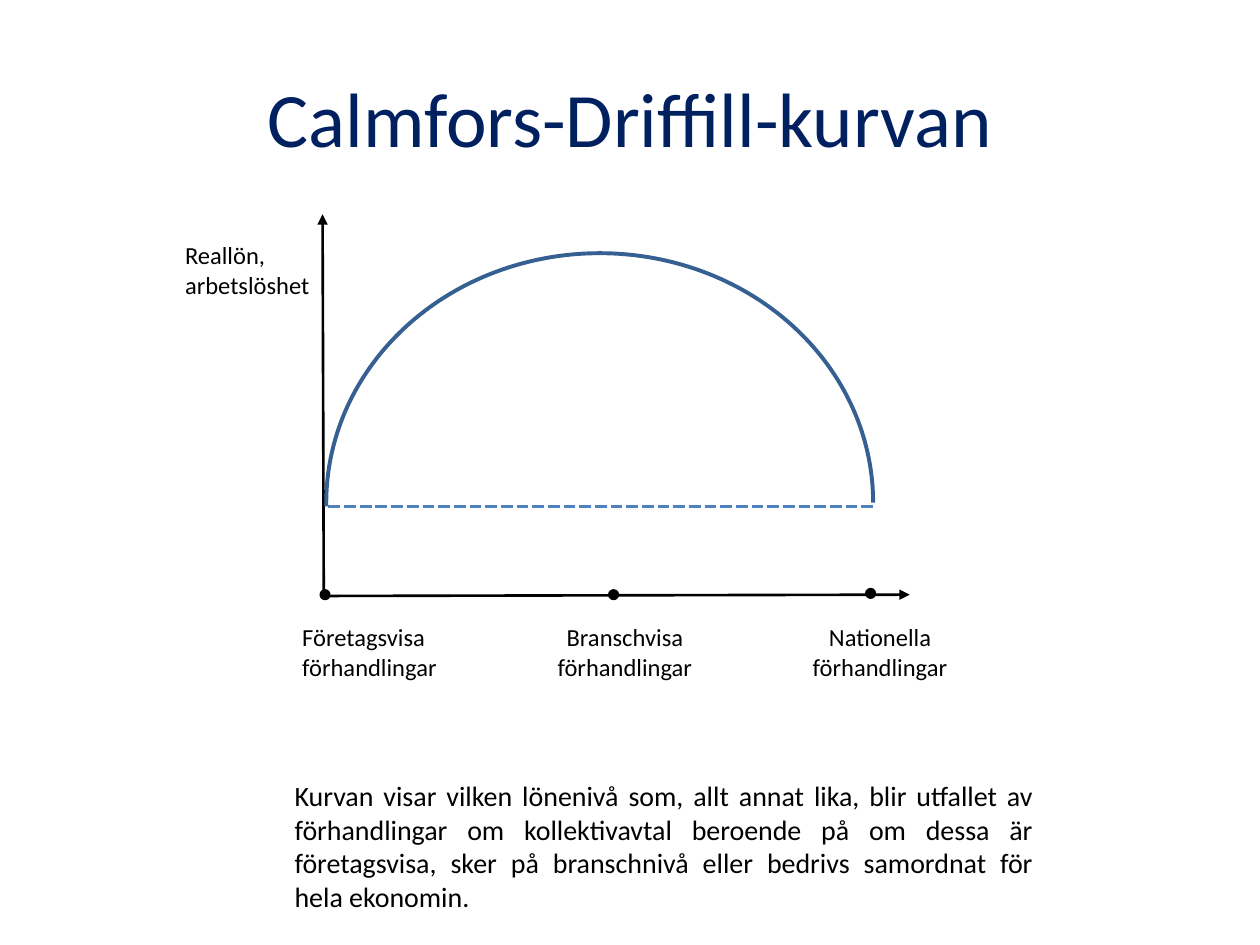
from lxml import etree
from pptx import Presentation
from pptx import util as u
from pptx.dml.color import RGBColor
from pptx.enum import dml, shapes, text
from pptx.oxml.ns import qn

BLACK, NAVY, BLUE, DARK_BLUE = "000000", "002060", "4F81BD", "376092"
LEFT, CENTER, JUSTIFY = text.PP_ALIGN.LEFT, text.PP_ALIGN.CENTER, text.PP_ALIGN.JUSTIFY


def rgb(value):
    """Return the colour of a hex string."""
    return RGBColor.from_string(value)


def inches(*values):
    """Return the values as lengths in inches."""
    return [u.Inches(v) for v in values]


def write(tf, content, size, color=BLACK, align=LEFT):
    """Put text in a frame, one paragraph a line, and format it."""
    tf.text = content
    for p in tf.paragraphs:
        p.alignment = align
        for r in p.runs:
            r.font.name = "Calibri"
            r.font.size = u.Pt(size)
            r.font.color.rgb = rgb(color)


def add_text(s, box, content, size=14, align=LEFT, wrap=True):
    """Add a text box that grows with its text."""
    tf = s.shapes.add_textbox(*inches(*box)).text_frame
    tf.word_wrap = wrap
    tf.auto_size = text.MSO_AUTO_SIZE.SHAPE_TO_FIT_TEXT
    write(tf, content, size, align=align)


def add_line(s, start, end, color=BLACK, width=1.5, arrow=False, dash=None):
    """Add a straight line, with an arrowhead or dashes if asked for."""
    sp = s.shapes.add_connector(shapes.MSO_CONNECTOR.STRAIGHT, *inches(*start, *end))
    sp.line.color.rgb = rgb(color)
    sp.line.width = u.Pt(width)
    if dash:
        sp.line.dash_style = dash
    if arrow:
        etree.SubElement(sp.line._get_or_add_ln(), qn("a:tailEnd"), type="triangle")
    etree.SubElement(sp._element.spPr, qn("a:effectLst"))


def add_outline(s, kind, box, color, width):
    """Add an unfilled preset shape with a coloured outline."""
    sp = s.shapes.add_shape(kind, *inches(*box))
    sp.shadow.inherit = False
    sp.fill.background()
    sp.line.color.rgb = rgb(color)
    sp.line.width = u.Pt(width)
    return sp


def add_title(s, box):
    """Place the title in its placeholder."""
    sp = s.shapes.title
    sp.left, sp.top, sp.width, sp.height = inches(*box)
    sp.text_frame.vertical_anchor = text.MSO_ANCHOR.MIDDLE
    write(sp.text_frame, "Calmfors-Driffill-kurvan", 44, NAVY, CENTER)


def add_axes(s, box):
    """Draw both axes, the level marks and their labels."""
    x, y, w, h = box
    base = y + h
    add_line(s, (x + 0.01, base), (x, y), arrow=True)
    add_line(s, (x + 0.01, base - 0.02), (x + w, base - 0.03), arrow=True)
    add_text(s, (x - 1.19, y + 0.16, 1.19, 0.57), "Reallön,\narbetslöshet", wrap=False)
    levels = [
        (2.58, 4.72, 2.3, 1.48, LEFT, "Företagsvisa förhandlingar"),
        (4.87, 4.72, 4.29, 1.34, CENTER, "Branschvisa förhandlingar"),
        (6.91, 4.71, 6.32, 1.33, CENTER, "Nationella\nförhandlingar"),
    ]
    for dot_x, dot_y, left, width, align, label in levels:
        dot = add_outline(s, shapes.MSO_SHAPE.OVAL,
                          (dot_x - 0.03, dot_y - 0.03, 0.06, 0.06), BLACK, 2)
        dot.fill.solid()
        dot.fill.fore_color.rgb = rgb(BLACK)
        add_text(s, (left, base + 0.14, width, 0.57), label, align=align)


def add_curve(s, box):
    """Draw the arched curve over its dashed base line."""
    x, y, w, h = box
    level = y + h / 2 + 0.03
    add_line(s, (x + w, level), (x, level), BLUE, 2.25,
             dash=dml.MSO_LINE.SQUARE_DOT)
    arc = add_outline(s, shapes.MSO_SHAPE.ARC, box, DARK_BLUE, 2.25)
    arc.adjustments[0] = 107.53
    arc.adjustments[1] = 0


def add_explanation(s, box):
    """Add the justified explanation below the diagram."""
    add_text(s, box, "Kurvan visar vilken lönenivå som, allt annat lika, blir utfallet av "
             "förhandlingar om kollektivavtal beroende på om dessa är företagsvisa, sker på "
             "branschnivå eller bedrivs samordnat för hela ekonomin.", 16, JUSTIFY)


def main():
    """Build and save the slide."""
    prs = Presentation()
    prs.slide_width, prs.slide_height = inches(10, 7.5)
    s = prs.slides.add_slide(prs.slide_layouts[5])
    add_title(s, (0.5, 0.3, 9, 1.25))
    add_axes(s, (2.56, 1.7, 4.66, 3.05))
    add_curve(s, (2.59, 2.01, 4.34, 3.96))
    add_explanation(s, (2.24, 6.13, 6.06, 1.17))
    prs.save("out.pptx")


if __name__ == "__main__":
    main()
